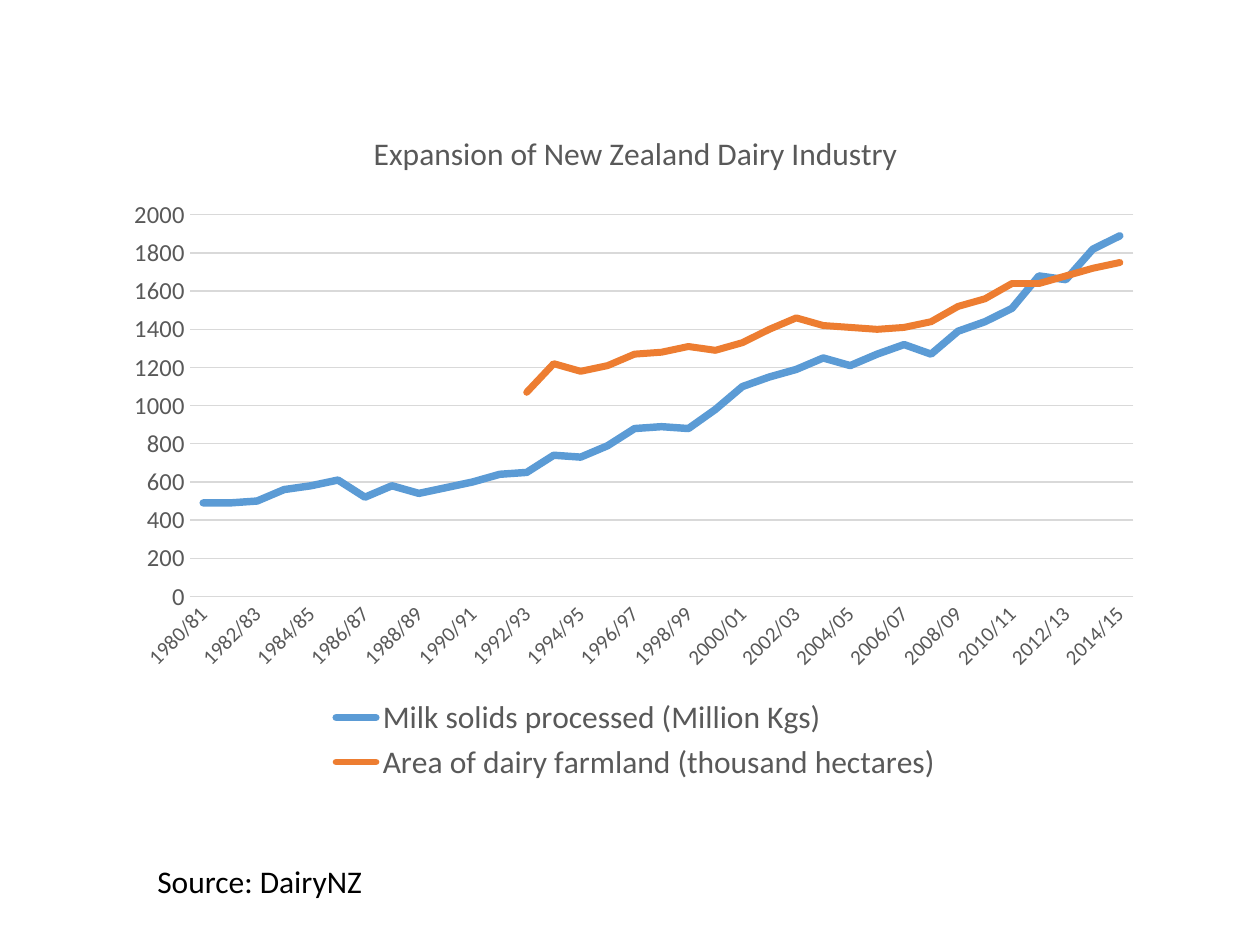
from lxml import etree
from pptx import Presentation
from pptx.chart.data import CategoryChartData
from pptx.dml.color import RGBColor
from pptx.enum.chart import XL_CHART_TYPE, XL_LEGEND_POSITION, XL_MARKER_STYLE, XL_TICK_MARK
from pptx.oxml import parse_xml
from pptx.oxml.ns import nsdecls, qn
from pptx.util import Inches, Pt

LINE_CHART = XL_CHART_TYPE.LINE
LEGEND_BOTTOM = XL_LEGEND_POSITION.BOTTOM
NO_MARKER = XL_MARKER_STYLE.NONE
NO_TICK = XL_TICK_MARK.NONE
FONT = "Calibri"
GREY = "595959"
RULE = "D9D9D9"

MILK_SOLIDS = [
    490, 490, 500, 560, 580, 610, 520, 580, 540, 570, 600, 640,
    650, 740, 730, 790, 880, 890, 880, 980, 1100, 1150, 1190, 1250,
    1210, 1270, 1320, 1270, 1390, 1440, 1510, 1680, 1660, 1820, 1890,
]
FARMLAND = [None] * 12 + [
    1070, 1220, 1180, 1210, 1270, 1280, 1310, 1290, 1330, 1400, 1460, 1420,
    1410, 1400, 1410, 1440, 1520, 1560, 1640, 1640, 1680, 1720, 1750,
]
SERIES = [
    ("Milk solids processed (Million Kgs)", MILK_SOLIDS, "5B9BD5", 4.25),
    ("Area of dairy farmland (thousand hectares)", FARMLAND, "ED7D31", 4),
]


def rgb(color):
    return RGBColor.from_string(color)


def set_font(font, size, color):
    font.name = FONT
    font.size = Pt(size)
    font.bold = False
    font.color.rgb = rgb(color)


def set_line(line, color, width):
    line.color.rgb = rgb(color)
    line.width = Pt(width)


def season(year):
    return "1999/2000" if year == 1999 else f"{year}/{(year + 1) % 100:02d}"


def style_title(chart, text):
    chart.has_title = True
    heading = chart.chart_title.text_frame.paragraphs[0]
    heading.text = text
    set_font(heading.font, 18, GREY)
    chart.chart_title.include_in_layout = False


def style_axes(chart):
    seasons, amounts = chart.category_axis, chart.value_axis
    for axis, size in ((seasons, 12), (amounts, 14)):
        axis.major_tick_mark = NO_TICK
        axis.minor_tick_mark = NO_TICK
        set_font(axis.tick_labels.font, size, GREY)
    set_line(seasons.format.line, RULE, 0.75)
    amounts.format.line.fill.background()
    set_line(amounts.major_gridlines.format.line, RULE, 0.75)
    amounts.minimum_scale = 0
    amounts.maximum_scale = 2000
    amounts.major_unit = 200

    category_xml = seasons._element
    category_xml.find(qn("c:txPr")).find(qn("a:bodyPr")).set("rot", "-2700000")
    label_skip = etree.Element(qn("c:tickLblSkip"), val="2")
    category_xml.find(qn("c:noMultiLvlLbl")).addprevious(label_skip)


def place_plot(chart, x, y, w, h):
    plot_area = chart._chartSpace.chart.plotArea
    for automatic in plot_area.findall(qn("c:layout")):
        plot_area.remove(automatic)
    sizes = "".join(
        f'<c:{key} val="{value}"/>'
        for key, value in (
            ("layoutTarget", "inner"), ("xMode", "edge"), ("yMode", "edge"),
            ("x", x), ("y", y), ("w", w), ("h", h),
        )
    )
    plot_area.insert(0, parse_xml(
        f'<c:layout {nsdecls("c")}><c:manualLayout>{sizes}</c:manualLayout></c:layout>'
    ))


def add_dairy_chart(slide):
    data = CategoryChartData()
    data.categories = [season(1980 + i) for i in range(len(MILK_SOLIDS))]
    for name, values, _, _ in SERIES:
        data.add_series(name, values)
    chart = slide.shapes.add_chart(
        LINE_CHART, Inches(0.93), Inches(0.84), Inches(8.23), Inches(5.41), data
    ).chart
    set_font(chart.font, 10, "000000")
    style_title(chart, "Expansion of New Zealand Dairy Industry")
    style_axes(chart)
    place_plot(chart, 0.07, 0.16, 0.91, 0.56)

    chart.plots[0].vary_by_categories = False
    for series, (_, _, color, width) in zip(chart.plots[0].series, SERIES):
        series.smooth = False
        series.marker.style = NO_MARKER
        set_line(series.format.line, color, width)
        series.format.line._get_or_add_ln().set("cap", "rnd")

    chart.has_legend = True
    chart.legend.position = LEGEND_BOTTOM
    chart.legend.include_in_layout = False
    set_font(chart.legend.font, 18, GREY)


def add_source(slide, text):
    frame = slide.shapes.add_textbox(
        Inches(1.15), Inches(6.79), Inches(4.5), Inches(0.4)
    ).text_frame
    frame.word_wrap = True
    credit = frame.paragraphs[0]
    credit.text = text
    set_font(credit.font, 18, "000000")


def main():
    deck = Presentation()
    deck.slide_width = Inches(10)
    deck.slide_height = Inches(7.5)
    slide = deck.slides.add_slide(deck.slide_layouts[6])
    add_source(slide, "Source: DairyNZ")
    add_dairy_chart(slide)
    deck.save("out.pptx")


if __name__ == "__main__":
    main()
